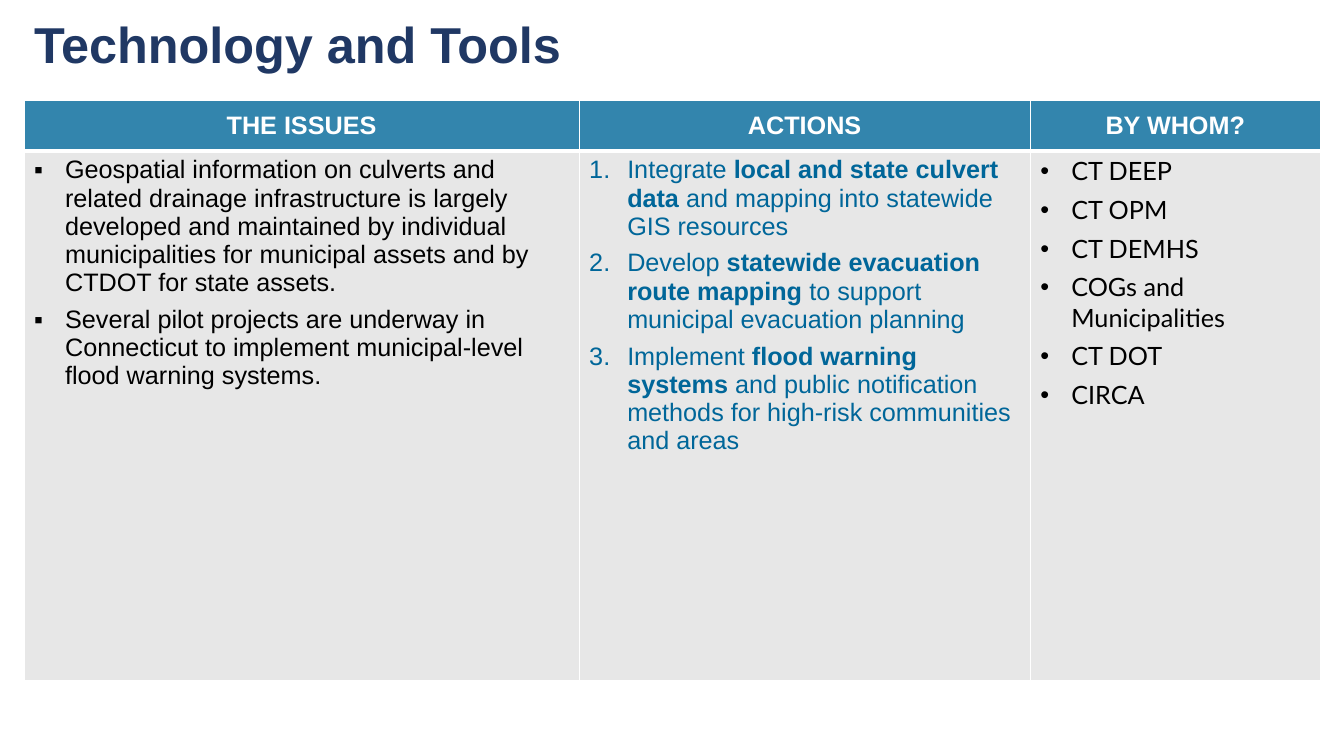
"""Build the Technology and Tools slide with its issues and actions table."""
from dataclasses import dataclass

import lxml.etree
import pptx
import pptx.dml.color
import pptx.enum.text
import pptx.oxml.ns
import pptx.util

EMU_PER_PX = 914400 / 100.8
TABLE_LEFT, TABLE_TOP = 24, 100
HEADER_HEIGHT, BODY_HEIGHT = 51, 530
TITLE_TOP, TITLE_HEIGHT = 14, 59
WHITE, BLACK, NAVY, BLUE = "FFFFFF", "000000", "203864", "006699"
HEADER_FILL, BODY_FILL = "3385AD", "E7E7E7"
THIN, THICK = 1, 3


@dataclass(frozen=True)
class TextRun:
    text: str
    bold: bool = False


@dataclass(frozen=True)
class Column:
    heading: str
    width: int
    indent: int
    bullet: str
    font: str
    color: str
    items: list[list[TextRun]]


COLUMNS = [
    Column("THE ISSUES", 555, 31, "▪", "Arial", BLACK, [
        [TextRun("Geospatial information on culverts and related drainage infrastructure "
                 "is largely developed and maintained by individual municipalities for "
                 "municipal assets and by CTDOT for state assets.")],
        [TextRun("Several pilot projects are underway in Connecticut to implement "
                 "municipal-level flood warning systems.")],
    ]),
    Column("ACTIONS", 451, 38, "1.", "Arial", BLUE, [
        [TextRun("Integrate "), TextRun("local and state culvert data", True),
         TextRun(" and mapping into statewide GIS resources")],
        [TextRun("Develop "), TextRun("statewide evacuation route mapping ", True),
         TextRun("to support municipal evacuation planning")],
        [TextRun("Implement "), TextRun("flood warning systems ", True),
         TextRun("and public notification methods for high-risk communities and areas")],
    ]),
    Column("BY WHOM?", 290, 31, "•", "Lato", BLACK, [
        [TextRun(name)] for name in
        ("CT DEEP", "CT OPM", "CT DEMHS", "COGs and Municipalities", "CT DOT", "CIRCA")
    ]),
]
TABLE_WIDTH = sum(column.width for column in COLUMNS)


def px(length: int) -> pptx.util.Emu:
    """Convert px to EMU."""
    return pptx.util.Emu(round(length * EMU_PER_PX))


def rgb(color: str) -> pptx.dml.color.RGBColor:
    """Turn a hex string into a colour."""
    return pptx.dml.color.RGBColor.from_string(color)


def add_element(parent, tag: str, **attributes: str):
    """Append a drawing element to a parent."""
    return lxml.etree.SubElement(parent, pptx.oxml.ns.qn(tag), attributes)


def add_run(paragraph, text_run: TextRun, font: str, size: int, color: str) -> None:
    """Add one formatted run to a paragraph."""
    run = paragraph.add_run()
    run.text = text_run.text
    run.font.name = font
    run.font.size = pptx.util.Pt(size)
    run.font.bold = text_run.bold
    run.font.color.rgb = rgb(color)


def add_bullet(paragraph, column: Column) -> None:
    """Give a paragraph the column's hanging bullet or number."""
    properties = paragraph._p.get_or_add_pPr()
    properties.set("marL", str(px(column.indent)))
    properties.set("indent", str(-px(column.indent)))
    add_element(properties, "a:buFont", typeface="Arial")
    if column.bullet == "1.":
        add_element(properties, "a:buAutoNum", type="arabicPeriod")
    else:
        add_element(properties, "a:buChar", char=column.bullet)


def style_cell(cell, fill: str, top: int, bottom: int) -> None:
    """Set the white borders and the fill of a cell."""
    properties = cell._tc.get_or_add_tcPr()
    widths = {"a:lnL": THIN, "a:lnR": THIN, "a:lnT": top, "a:lnB": bottom}
    for tag, width in widths.items():
        line = add_element(properties, tag, w=str(pptx.util.Pt(width)))
        add_element(add_element(line, "a:solidFill"), "a:srgbClr", val=WHITE)
    cell.fill.solid()
    cell.fill.fore_color.rgb = rgb(fill)


def fill_header(cell, column: Column) -> None:
    """Write a column heading."""
    style_cell(cell, HEADER_FILL, THIN, THICK)
    cell.vertical_anchor = pptx.enum.text.MSO_ANCHOR.MIDDLE
    paragraph = cell.text_frame.paragraphs[0]
    paragraph.alignment = pptx.enum.text.PP_ALIGN.CENTER
    add_run(paragraph, TextRun(column.heading, True), "Arial", 18, WHITE)


def fill_body(cell, column: Column) -> None:
    """Write the list of a column."""
    style_cell(cell, BODY_FILL, THICK, THIN)
    frame = cell.text_frame
    for index, item in enumerate(column.items):
        paragraph = frame.add_paragraph() if index else frame.paragraphs[0]
        add_bullet(paragraph, column)
        paragraph.space_after = pptx.util.Pt(6)
        for text_run in item:
            add_run(paragraph, text_run, column.font, 18, column.color)


def add_title(slide) -> None:
    """Place and write the slide title."""
    title = slide.shapes.title
    title.left, title.top = px(TABLE_LEFT), px(TITLE_TOP)
    title.width, title.height = px(TABLE_WIDTH), px(TITLE_HEIGHT)
    frame = title.text_frame
    frame.auto_size = pptx.enum.text.MSO_AUTO_SIZE.NONE
    frame.vertical_anchor = pptx.enum.text.MSO_ANCHOR.MIDDLE
    paragraph = frame.paragraphs[0]
    paragraph.alignment = pptx.enum.text.PP_ALIGN.LEFT
    add_run(paragraph, TextRun("Technology and Tools", True), "Arial", 36, NAVY)


def add_action_table(slide) -> None:
    """Add the table of issues, actions and responsible bodies."""
    table = slide.shapes.add_table(
        2, len(COLUMNS), px(TABLE_LEFT), px(TABLE_TOP),
        px(TABLE_WIDTH), px(HEADER_HEIGHT + BODY_HEIGHT)).table
    table.horz_banding = False
    table.rows[0].height = px(HEADER_HEIGHT)
    table.rows[1].height = px(BODY_HEIGHT)
    for index, column in enumerate(COLUMNS):
        table.columns[index].width = px(column.width)
        fill_header(table.cell(0, index), column)
        fill_body(table.cell(1, index), column)


def main() -> None:
    """Build and save the presentation."""
    presentation = pptx.Presentation()
    presentation.slide_width = pptx.util.Inches(13.33)
    presentation.slide_height = pptx.util.Inches(7.5)
    slide = presentation.slides.add_slide(presentation.slide_layouts.get_by_name("Title Only"))
    add_title(slide)
    add_action_table(slide)
    presentation.save("out.pptx")


if __name__ == "__main__":
    main()
